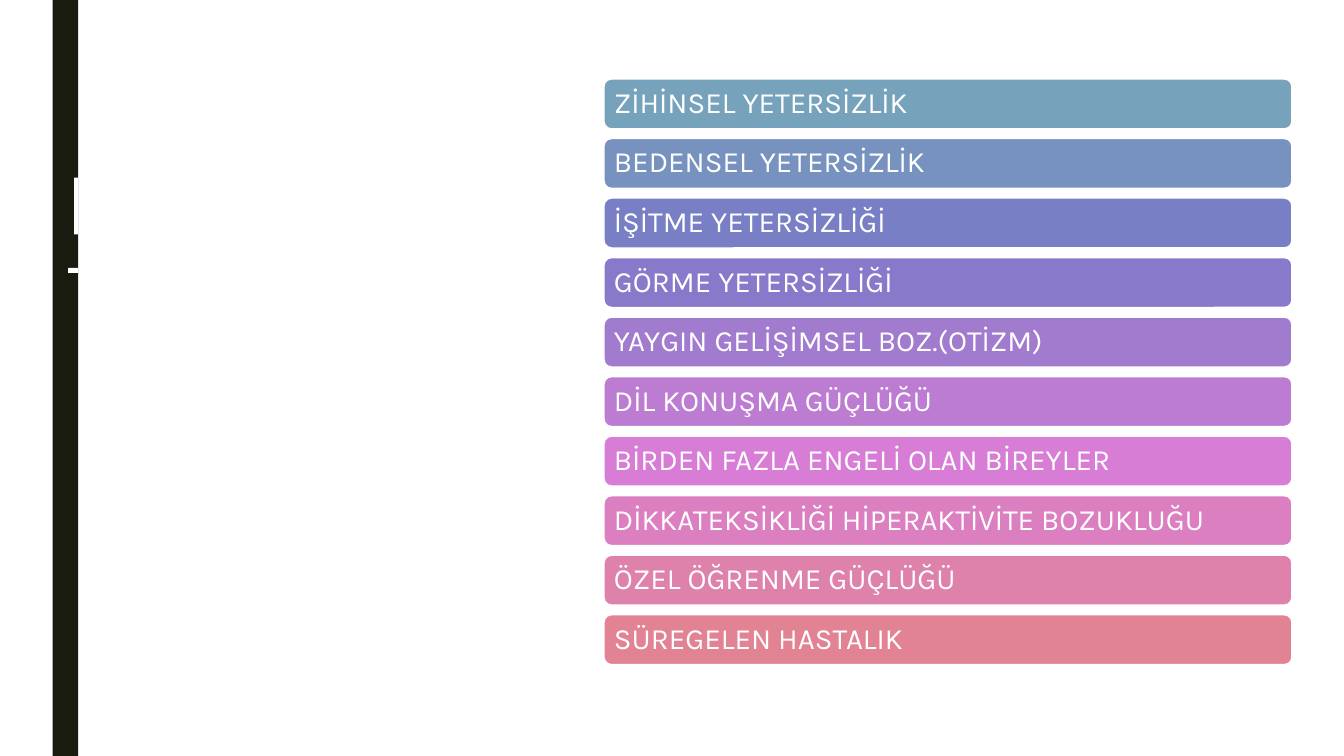
from dataclasses import dataclass

from pptx import Presentation
from pptx.dml.color import RGBColor
from pptx.enum.shapes import MSO_SHAPE
from pptx.enum.text import MSO_ANCHOR, PP_ALIGN
from pptx.util import Cm, Pt

RECT = MSO_SHAPE.RECTANGLE
ROUND = MSO_SHAPE.ROUNDED_RECTANGLE
MIDDLE = MSO_ANCHOR.MIDDLE
LEFT = PP_ALIGN.LEFT


@dataclass(frozen=True)
class Theme:
    white: str = "FFFFFF"
    band: str = "191B0E"
    font: str = "Karla"
    size: float = 21
    space: float = 0.9
    edge: float = 2.75


THEME = Theme()
MARKS = [(0.1, 4.48, 1.43), (0.25, 6.75, 0.13)]
ROWS = [
    ("ZİHİNSEL YETERSİZLİK", "77A2BB"),
    ("BEDENSEL YETERSİZLİK", "7892C0"),
    ("İŞİTME YETERSİZLİĞİ", "787FC5"),
    ("GÖRME YETERSİZLİĞİ", "8879CA"),
    ("YAYGIN GELİŞİMSEL BOZ.(OTİZM)", "A17BCE"),
    ("DİL KONUŞMA GÜÇLÜĞÜ", "BB7CD2"),
    ("BİRDEN FAZLA ENGELİ OLAN BİREYLER", "D77DD6"),
    ("DİKKATEKSİKLİĞİ HİPERAKTİVİTE BOZUKLUĞU", "DB7FC1"),
    ("ÖZEL ÖĞRENME GÜÇLÜĞÜ", "DE81AB"),
    ("SÜREGELEN HASTALIK", "E28394"),
]


def color(code):
    return RGBColor.from_string(code)


def block(slide, kind, box, fill):
    shape = slide.shapes.add_shape(kind, *box)
    shape.shadow.inherit = False
    shape.fill.solid()
    shape.fill.fore_color.rgb = color(fill)
    shape.line.fill.background()
    return shape


def write(shape, text):
    frame = shape.text_frame
    frame.text = text
    frame.word_wrap = True
    frame.vertical_anchor = MIDDLE
    frame.margin_left = frame.margin_right = Cm(0.22)
    frame.margin_top = frame.margin_bottom = Cm(0.1)
    para = frame.paragraphs[0]
    para.alignment = LEFT
    para.line_spacing = THEME.space
    face = para.runs[0].font
    face.name = THEME.font
    face.size = Pt(THEME.size)
    face.color.rgb = color(THEME.white)


def add_band(slide, box):
    left, top, width, height = box
    block(slide, RECT, box, THEME.band)
    for wide, down, tall in MARKS:
        place = (left + width - Cm(wide), top + Cm(down), Cm(wide), Cm(tall))
        block(slide, RECT, place, THEME.white)


def add_rows(slide, box):
    left, top, width, height = box
    gap = Cm(0.18)
    tall = (height - gap * (len(ROWS) - 1)) // len(ROWS)
    for i, (text, fill) in enumerate(ROWS):
        place = (left, top + i * (tall + gap), width, tall)
        shape = block(slide, ROUND, place, fill)
        shape.line.color.rgb = color(THEME.white)
        shape.line.width = Pt(THEME.edge)
        write(shape, text)


def main():
    deck = Presentation()
    deck.slide_width = Cm(33.87)
    deck.slide_height = Cm(19.05)
    slide = deck.slides.add_slide(deck.slide_layouts[6])
    add_band(slide, (Cm(1.33), 0, Cm(0.64), deck.slide_height))
    add_rows(slide, (Cm(15.19), Cm(1.96), Cm(17.4), Cm(14.82)))
    deck.save("out.pptx")


if __name__ == "__main__":
    main()
